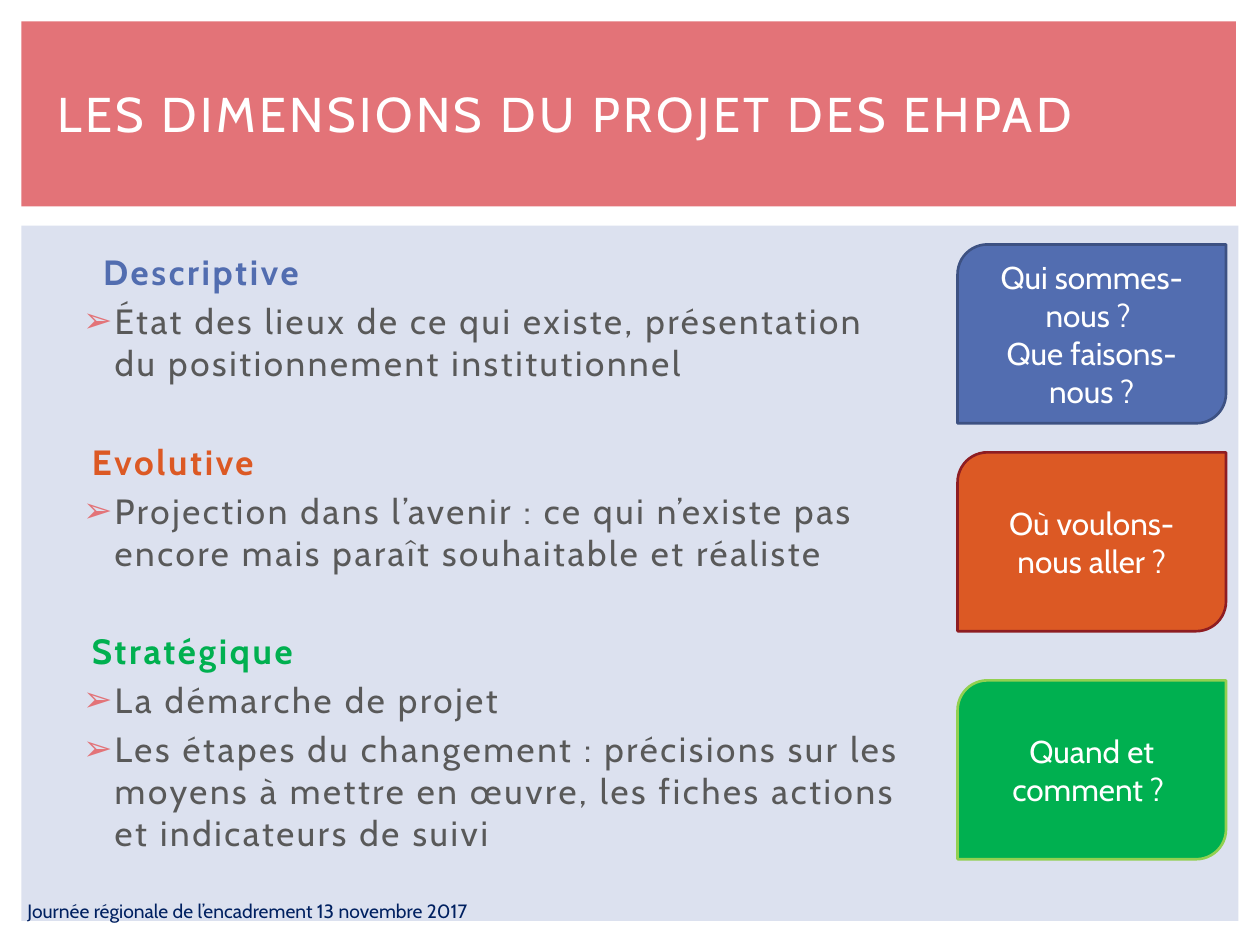
from lxml.etree import SubElement
from pptx import Presentation
from pptx.dml.color import RGBColor
from pptx.enum.shapes import MSO_SHAPE
from pptx.enum.text import MSO_ANCHOR, MSO_AUTO_SIZE, PP_ALIGN
from pptx.oxml.ns import qn
from pptx.util import Pt

WHITE = RGBColor(0xFF, 0xFF, 0xFF)
PINK = RGBColor(0xE3, 0x73, 0x78)
PALE_BLUE = RGBColor(0xDC, 0xE1, 0xEF)
GREY = RGBColor(0x59, 0x59, 0x59)
NAVY = RGBColor(0x00, 0x20, 0x60)
BLUE = RGBColor(0x52, 0x6D, 0xB0)
DARK_BLUE = RGBColor(0x3D, 0x51, 0x82)
ORANGE = RGBColor(0xDC, 0x59, 0x24)
DARK_RED = RGBColor(0x8E, 0x1D, 0x22)
GREEN = RGBColor(0x00, 0xB0, 0x50)
LIGHT_GREEN = RGBColor(0x92, 0xD0, 0x50)

# Heading, colour, left margin, space before, bullet points
SECTIONS = [
    ("Descriptive", BLUE, 15, 0,
     ["État des lieux de ce qui existe, présentation du positionnement institutionnel"]),
    ("Evolutive", ORANGE, 8.64, 32.3,
     ["Projection dans l’avenir : ce qui n’existe pas encore mais paraît souhaitable et réaliste"]),
    ("Stratégique", GREEN, 8.64, 32.3,
     ["La démarche de projet",
      "Les étapes du changement : précisions sur les moyens à mettre en œuvre, "
      "les fiches actions et indicateurs de suivi"]),
]

# Top, fill, outline, text
QUESTIONS = [
    (139.7, BLUE, DARK_BLUE, "Qui sommes-nous ? \nQue faisons-nous ?"),
    (258.5, ORANGE, DARK_RED, "Où voulons-nous aller ?"),
    (388.8, GREEN, LIGHT_GREEN, "Quand et comment ? "),
]


class SlideBuilder:
    font = "Cabin"

    def __init__(self, slide):
        self.slide = slide

    def place(self, shape, left, top, width, height):
        shape.left, shape.top = Pt(left), Pt(top)
        shape.width, shape.height = Pt(width), Pt(height)

    def prepare(self, text_frame, anchor):
        text_frame.word_wrap = True
        text_frame.auto_size = MSO_AUTO_SIZE.NONE
        text_frame.vertical_anchor = anchor

    def format(self, paragraph, size, color, bold=False, spacing=0):
        """Style every run; spacing is the letter spacing in points."""
        for run in paragraph.runs:
            run.font.name = self.font
            run.font.size = Pt(size)
            run.font.bold = bold
            run.font.color.rgb = color
            if spacing:
                run.font._element.set("spc", str(int(spacing * 100)))

    def indent(self, paragraph, margin, hanging=0, bullet=None):
        properties = paragraph._p.get_or_add_pPr()
        properties.set("marL", str(Pt(margin)))
        properties.set("indent", str(-Pt(hanging)))
        if bullet:
            color = SubElement(properties, qn("a:buClr"))
            SubElement(color, qn("a:srgbClr"), val=str(PINK))
            SubElement(properties, qn("a:buChar"), char=bullet)
        else:
            SubElement(properties, qn("a:buNone"))

    def shape(self, kind, box, fill, outline=None):
        shape = self.slide.shapes.add_shape(kind, *map(Pt, box))
        shape.shadow.inherit = False
        shape.fill.solid()
        shape.fill.fore_color.rgb = fill
        if outline is None:
            shape.line.fill.background()
        else:
            shape.line.color.rgb = outline
            shape.line.width = Pt(1.5)
        return shape

    def panel(self, box, fill):
        """Add a plain rectangle behind everything else."""
        element = self.shape(MSO_SHAPE.RECTANGLE, box, fill).element
        element.getparent().insert(2, element)

    def title(self, text, box):
        title = self.slide.shapes.title
        self.place(title, *box)
        self.prepare(title.text_frame, MSO_ANCHOR.MIDDLE)
        title.text_frame.text = text
        paragraph = title.text_frame.paragraphs[0]
        paragraph.alignment = PP_ALIGN.LEFT
        self.format(paragraph, 27.9, WHITE, spacing=2)

    def body(self, sections, box):
        body = self.slide.placeholders[1]
        self.place(body, *box)
        text_frame = body.text_frame
        self.prepare(text_frame, MSO_ANCHOR.TOP)
        for index, (heading, color, margin, space, points) in enumerate(sections):
            paragraph = text_frame.add_paragraph() if index else text_frame.paragraphs[0]
            paragraph.text = heading
            paragraph.space_before = Pt(space)
            self.indent(paragraph, margin)
            self.format(paragraph, 20, color, bold=True, spacing=1.5)
            for point in points:
                paragraph = text_frame.add_paragraph()
                paragraph.text = point
                paragraph.space_before = Pt(4)
                self.indent(paragraph, 21.6, hanging=18, bullet="➢")
                self.format(paragraph, 20, GREY, spacing=1.5)

    def question(self, text, box, fill, outline):
        shape = self.shape(MSO_SHAPE.ROUND_2_DIAG_RECTANGLE, box, fill, outline)
        self.prepare(shape.text_frame, MSO_ANCHOR.MIDDLE)
        shape.text_frame.text = text
        for paragraph in shape.text_frame.paragraphs:
            paragraph.alignment = PP_ALIGN.CENTER
            self.format(paragraph, 18, WHITE)

    def footer(self, text, box):
        text_frame = self.slide.shapes.add_textbox(*map(Pt, box)).text_frame
        self.prepare(text_frame, MSO_ANCHOR.MIDDLE)
        text_frame.text = text
        self.format(text_frame.paragraphs[0], 11, NAVY)


def main():
    presentation = Presentation()
    presentation.slide_width, presentation.slide_height = Pt(720), Pt(540)
    slide = presentation.slides.add_slide(presentation.slide_layouts[1])
    builder = SlideBuilder(slide)
    builder.panel((12.2, 12.2, 694, 105.8), PINK)
    builder.panel((12.2, 128.9, 695.5, 397.4), PALE_BLUE)
    builder.body(SECTIONS, (36.7, 139.7, 488.2, 356.4))
    builder.footer("Journée régionale de l’encadrement 13 novembre 2017",
                   (8.6, 508.3, 290.9, 24.5))
    builder.title("LES DIMENSIONS DU PROJET DES EHPAD", (25.5, 37.4, 660.2, 54.7))
    for top, fill, outline, text in QUESTIONS:
        builder.question(text, (547.2, top, 153.4, 102.2), fill, outline)
    presentation.save("out.pptx")


if __name__ == "__main__":
    main()
